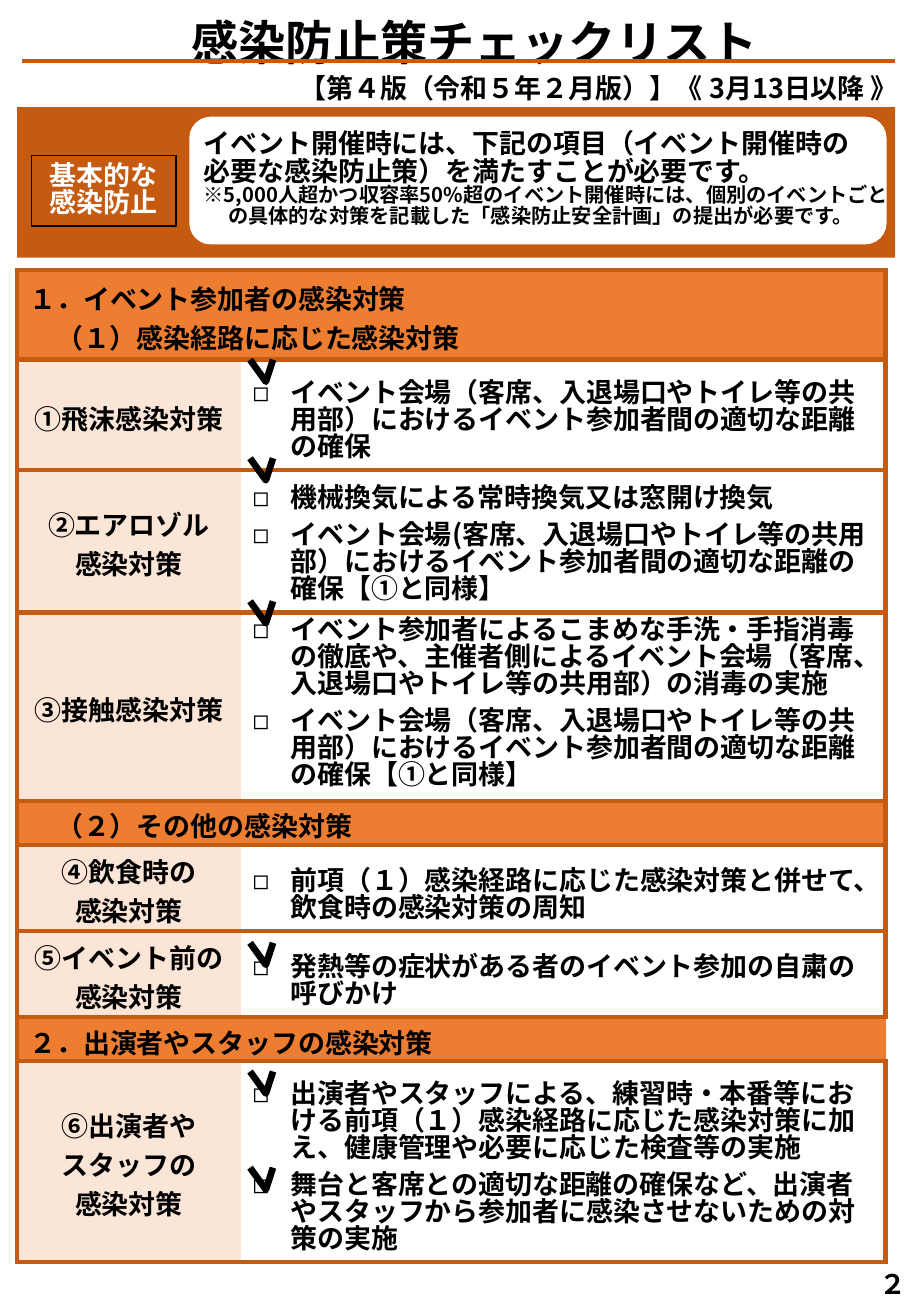
from dataclasses import dataclass

import pptx
import pptx.dml.color
import pptx.enum.lang
import pptx.enum.shapes
import pptx.enum.text
import pptx.oxml
import pptx.oxml.ns
import pptx.util
from lxml import etree

Cm = pptx.util.Cm
Pt = pptx.util.Pt
ALIGN = pptx.enum.text.PP_ALIGN
ANCHOR = pptx.enum.text.MSO_ANCHOR
SHAPE = pptx.enum.shapes.MSO_SHAPE
qn = pptx.oxml.ns.qn

FONT = "Noto Sans CJK JP"
COLORS = {"rust": "C55A11", "orange": "ED7D31", "peach": "FBE5D6",
          "white": "FFFFFF", "black": "000000"}
TABLE_LEFT = 0.36
COLUMN_WIDTHS = (4.67, 13.49)
CHECK_LEFT = 5.23
CHECK_TOPS = (7.52, 9.58, 12.57, 19.71, 22.4, 24.41)


@dataclass
class Line:
    text: str
    size: float = 16
    indent: float = 0
    hanging: float = 0


@dataclass
class Heading:
    height: float
    lines: list[Line]
    edges: str = "LRTB"


@dataclass
class Measure:
    height: float
    label: list[str]
    items: list[str]
    anchor: ANCHOR = ANCHOR.BOTTOM


DISTANCE = "イベント会場（客席、入退場口やトイレ等の共用部）におけるイベント参加者間の適切な距離の確保"

INFECTION_ROUTES = [
    Heading(1.88, [Line("１．イベント参加者の感染対策"),
                   Line("（１）感染経路に応じた感染対策", indent=0.56)]),
    Measure(2.31, ["①飛沫感染対策"], [DISTANCE]),
    Measure(2.97, ["②エアロゾル", "感染対策"],
            ["機械換気による常時換気又は窓開け換気",
             DISTANCE.replace("（", "(") + "【①と同様】"]),
    Measure(3.94, ["③接触感染対策"],
            ["イベント参加者によるこまめな手洗・手指消毒の徹底や、主催者側によるイベント会場"
             "（客席、入退場口やトイレ等の共用部）の消毒の実施",
             DISTANCE + "【①と同様】"], ANCHOR.MIDDLE),
]
OTHER_MEASURES = [
    Heading(0.92, [Line("（２）その他の感染対策", indent=0.56)]),
    Measure(1.8, ["④飲食時の", "感染対策"],
            ["前項（１）感染経路に応じた感染対策と併せて、飲食時の感染対策の周知"]),
    Measure(1.8, ["⑤イベント前の感染対策"],
            ["発熱等の症状がある者のイベント参加の自粛の呼びかけ"]),
    Heading(0.92, [Line("２．出演者やスタッフの感染対策")], "LTB"),
    Measure(4.2, ["⑥出演者や", "スタッフの", "感染対策"],
            ["出演者やスタッフによる、練習時・本番等における前項（１）感染経路に応じた"
             "感染対策に加え、健康管理や必要に応じた検査等の実施",
             "舞台と客席との適切な距離の確保など、出演者やスタッフから参加者に"
             "感染させないための対策の実施"]),
]


def rgb(color: str) -> pptx.dml.color.RGBColor:
    return pptx.dml.color.RGBColor.from_string(COLORS[color])


def write(frame, lines: list[Line], *, color: str = "black", align=ALIGN.LEFT,
          anchor=ANCHOR.MIDDLE, spacing=None, after: float = 0, bullet: str = "") -> None:
    """Fill a text frame, one paragraph per line."""
    frame.word_wrap = True
    frame.vertical_anchor = anchor
    for number, line in enumerate(lines):
        paragraph = frame.paragraphs[0] if number == 0 else frame.add_paragraph()
        paragraph.alignment = align
        paragraph.line_spacing = spacing
        paragraph.space_before = Pt(0)
        paragraph.space_after = Pt(after)
        properties = paragraph._p.get_or_add_pPr()
        properties.set("marL", str(Cm(line.indent + line.hanging)))
        properties.set("indent", str(-Cm(line.hanging)))
        if bullet:
            etree.SubElement(properties, qn("a:buFont"), typeface=FONT)
            etree.SubElement(properties, qn("a:buChar"), char=bullet)
        run = paragraph.add_run()
        run.text = line.text
        run.font.size = Pt(line.size)
        run.font.bold = True
        run.font.name = FONT
        run.font.language_id = pptx.enum.lang.MSO_LANGUAGE_ID.JAPANESE
        run.font.color.rgb = rgb(color)
        etree.SubElement(run._r.get_or_add_rPr(), qn("a:ea"), typeface=FONT)


def add_box(slide, kind: SHAPE, left: float, top: float, width: float, height: float,
            fill: str = "", line: str = ""):
    box = slide.shapes.add_shape(kind, Cm(left), Cm(top), Cm(width), Cm(height))
    box.shadow.inherit = False
    if fill:
        box.fill.solid()
        box.fill.fore_color.rgb = rgb(fill)
    else:
        box.fill.background()
    if line:
        box.line.color.rgb = rgb(line)
        box.line.width = Pt(1)
    else:
        box.line.fill.background()
    return box


def add_text(slide, left: float, top: float, width: float, height: float,
             lines: list[Line], **text_format) -> None:
    box = slide.shapes.add_textbox(Cm(left), Cm(top), Cm(width), Cm(height))
    write(box.text_frame, lines, **text_format)


def style_cell(cell, fill: str, edges: str) -> None:
    """Draw the named edges (L, R, T, B), clear the others, then fill."""
    properties = cell._tc.get_or_add_tcPr()
    for edge in "LRTB":
        border = etree.SubElement(properties, qn(f"a:ln{edge}"), w=str(Pt(3)))
        if edge in edges:
            paint = etree.SubElement(border, qn("a:solidFill"))
            etree.SubElement(paint, qn("a:srgbClr"), val=COLORS["rust"])
        else:
            etree.SubElement(border, qn("a:noFill"))
    cell.fill.solid()
    cell.fill.fore_color.rgb = rgb(fill)


def add_checklist(slide, top: float, rows: list[Heading | Measure]) -> None:
    table = slide.shapes.add_table(
        len(rows), 2, Cm(TABLE_LEFT), Cm(top), Cm(sum(COLUMN_WIDTHS)),
        Cm(sum(row.height for row in rows))).table
    table.first_row = table.horz_banding = False
    for column, width in zip(table.columns, COLUMN_WIDTHS):
        column.width = Cm(width)
    for number, row in enumerate(rows):
        table.rows[number].height = Cm(row.height)
        first, second = table.cell(number, 0), table.cell(number, 1)
        first.margin_top, first.margin_bottom = Cm(0.1), Cm(0)
        if isinstance(row, Heading):
            first.merge(second)
            for cell in (first, second):
                style_cell(cell, "orange", row.edges)
            write(first.text_frame, row.lines)
            first.vertical_anchor = ANCHOR.MIDDLE
        else:
            style_cell(first, "peach", "LTB")
            style_cell(second, "white", "RTB")
            write(first.text_frame, [Line(text) for text in row.label], align=ALIGN.CENTER)
            write(second.text_frame, [Line(text, hanging=0.79) for text in row.items],
                  spacing=Pt(16), after=6, bullet="◻")
            first.vertical_anchor = ANCHOR.MIDDLE
            second.vertical_anchor = row.anchor


def add_check_mark(slide, top: float) -> None:
    outline = slide.shapes.build_freeform(Cm(CHECK_LEFT), Cm(top))
    outline.add_line_segments([(Cm(CHECK_LEFT + 0.33), Cm(top + 0.46)),
                               (Cm(CHECK_LEFT + 0.48), Cm(top))], close=False)
    check = outline.convert_to_shape()
    check.shadow.inherit = False
    check.fill.background()
    check.line.color.rgb = rgb("black")
    check.line.width = Pt(4)


def add_title(slide) -> None:
    title = slide.shapes.title
    title.left, title.top, title.width, title.height = Cm(-0.58), Cm(0.15), Cm(21.01), Cm(1.45)
    write(title.text_frame, [Line("感染防止策チェックリスト", 28)], align=ALIGN.CENTER, spacing=1.0)
    rule = slide.shapes.add_connector(pptx.enum.shapes.MSO_CONNECTOR.STRAIGHT,
                                      Cm(0.46), Cm(1.27), Cm(18.72), Cm(1.27))
    rule.line.color.rgb = rgb("rust")
    rule.line.width = Pt(2.25)
    etree.SubElement(rule._element.spPr, qn("a:effectLst"))
    add_text(slide, 5.23, 1.37, 14.58, 0.94,
             [Line("【第４版（令和５年２月版）】《 3月13日以降 》")], align=ALIGN.CENTER)


def add_banner(slide) -> None:
    add_box(slide, SHAPE.RECTANGLE, 0.36, 2.24, 18.36, 3.15, fill="rust")
    add_box(slide, SHAPE.ROUNDED_RECTANGLE, 3.96, 2.44, 14.58, 2.67, fill="white")
    basics = add_box(slide, SHAPE.RECTANGLE, 0.66, 3.25, 3.02, 1.47, line="black")
    write(basics.text_frame, [Line("基本的な"), Line("感染防止")],
          color="white", align=ALIGN.CENTER, spacing=0.84)
    add_text(slide, 4.01, 2.64, 14.83, 2.77, [
        Line("イベント開催時には、下記の項目（イベント開催時の"),
        Line("必要な感染防止策）を満たすことが必要です。"),
        Line("※5,000人超かつ収容率50%超のイベント開催時には、個別のイベントごとの"
             "具体的な対策を記載した「感染防止安全計画」の提出が必要です。", 12, hanging=0.51),
    ], anchor=ANCHOR.TOP, spacing=0.84)


def main() -> None:
    presentation = pptx.Presentation()
    presentation.slide_width, presentation.slide_height = Cm(19.05), Cm(27.51)
    slide = presentation.slides.add_slide(presentation.slide_layouts[5])
    add_title(slide)
    add_banner(slide)
    add_checklist(slide, 5.64, INFECTION_ROUTES)
    add_checklist(slide, 16.74, OTHER_MEASURES)
    add_text(slide, 17.93, 26.37, 1.5, 0.94, [Line("２")], align=ALIGN.CENTER)
    for top in CHECK_TOPS:
        add_check_mark(slide, top)
    presentation.save("out.pptx")


if __name__ == "__main__":
    main()
